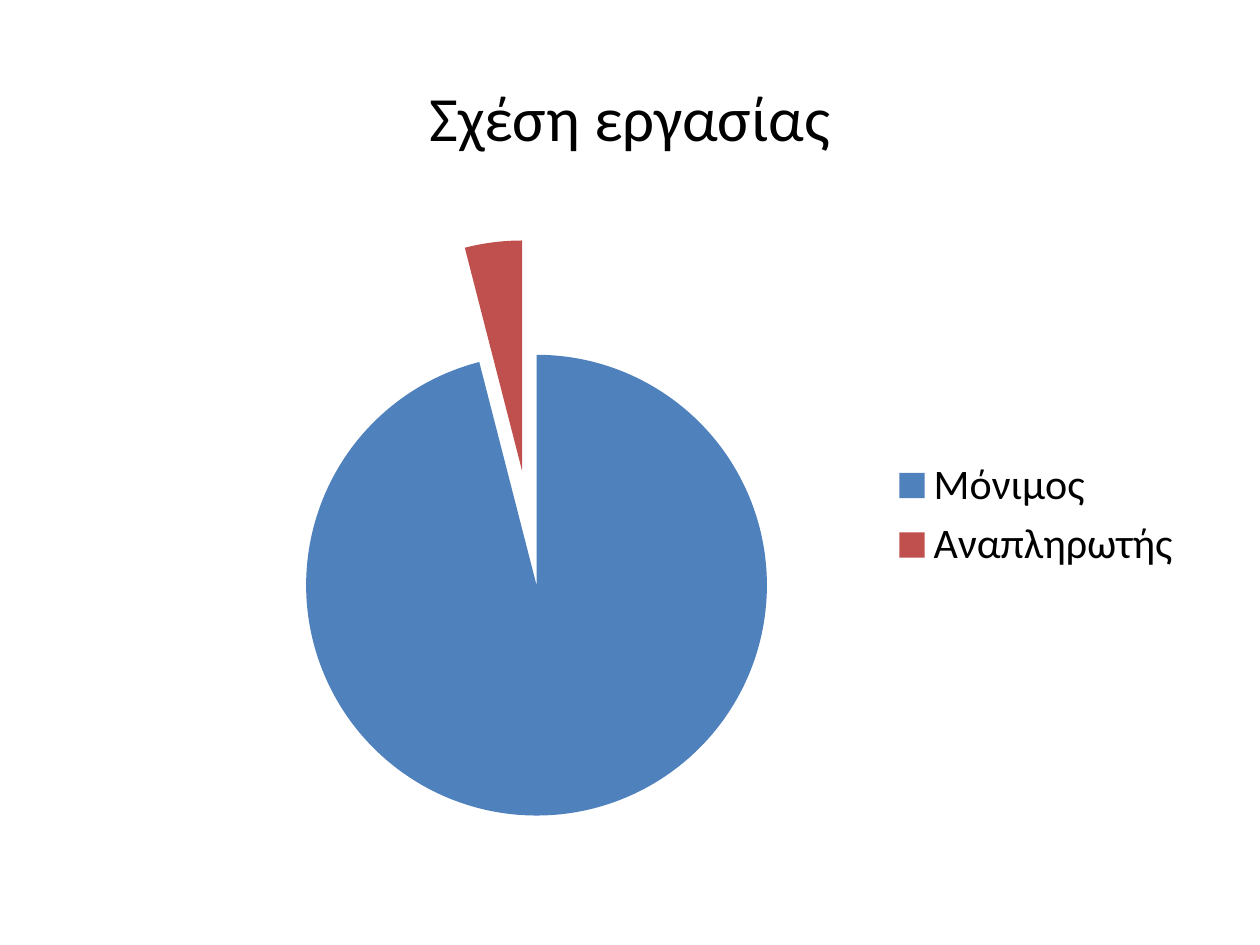
from lxml import etree
from pptx import Presentation
from pptx.chart.data import CategoryChartData
from pptx.dml.color import RGBColor
from pptx.enum.chart import XL_CHART_TYPE as ChartType, XL_LEGEND_POSITION as LegendPosition
from pptx.enum.text import MSO_ANCHOR as Anchor, PP_ALIGN as Align
from pptx.oxml.ns import qn
from pptx.util import Inches, Pt

FONT = "Calibri"
COLORS = {"text": "000000", "permanent": "4F81BD", "substitute": "C0504D"}
SHARES = {"Μόνιμος": (96, "permanent"), "Αναπληρωτής": (4, "substitute")}
PLOT_LAYOUT = {"x": 0.14, "y": 0.07, "w": 0.54, "h": 0.9}


def style_font(font, size):
    """Apply the slide's typeface and text colour at the given point size."""
    font.name = FONT
    font.size = Pt(size)
    font.color.rgb = RGBColor.from_string(COLORS["text"])


def set_plot_layout(chart):
    """Fix the inner plot area as fractions of the chart box."""
    plot_area = chart.element.find(".//" + qn("c:plotArea"))
    layout = plot_area.find(qn("c:layout"))
    if layout is None:
        layout = etree.Element(qn("c:layout"))
        plot_area.insert(0, layout)
    manual = etree.SubElement(layout, qn("c:manualLayout"))
    settings = {"layoutTarget": "inner", "xMode": "edge", "yMode": "edge", **PLOT_LAYOUT}
    for name, value in settings.items():
        etree.SubElement(manual, qn("c:" + name)).set("val", str(value))


def explode_slices(series, percent):
    """Push every slice outward by a percentage of the radius."""
    explosion = etree.Element(qn("c:explosion"))
    explosion.set("val", str(percent))
    series.format.element.find(qn("c:dPt")).addprevious(explosion) if hasattr(
        series.format, "element") else series._element.find(qn("c:dPt")).addprevious(explosion)


def add_title(slide, left, top, width, height):
    """Place the centred slide title in the given box."""
    frame = slide.shapes.add_textbox(left, top, width, height).text_frame
    frame.word_wrap = True
    frame.vertical_anchor = Anchor.MIDDLE
    paragraph = frame.paragraphs[0]
    paragraph.text = "Σχέση εργασίας"
    paragraph.alignment = Align.CENTER
    style_font(paragraph.font, 36)


def add_employment_chart(slide, left, top, width, height):
    """Place the exploded pie of employment types in the given box."""
    data = CategoryChartData()
    data.categories = list(SHARES)
    data.add_series("Series 1", [value for value, _ in SHARES.values()])
    chart = slide.shapes.add_chart(ChartType.PIE, left, top, width, height, data).chart
    style_font(chart.font, 10)
    chart.has_title = False
    chart.has_legend = True
    chart.legend.position = LegendPosition.RIGHT
    chart.legend.include_in_layout = False
    style_font(chart.legend.font, 24)
    plot = chart.plots[0]
    plot.vary_by_categories = True
    series = plot.series[0]
    for index, (_, color) in enumerate(SHARES.values()):
        fill = series.points[index].format.fill
        fill.solid()
        fill.fore_color.rgb = RGBColor.from_string(COLORS[color])
    explode_slices(series, 25)
    set_plot_layout(chart)


def main():
    """Build the slide and save the presentation."""
    presentation = Presentation()
    presentation.slide_width = Inches(10)
    presentation.slide_height = Inches(7.5)
    slide = presentation.slides.add_slide(presentation.slide_layouts[6])
    add_title(slide, Inches(0.5), Inches(0.3), Inches(9), Inches(1.25))
    add_employment_chart(slide, Inches(0.52), Inches(1.55), Inches(8.98), Inches(5.08))
    presentation.save("out.pptx")


if __name__ == "__main__":
    main()
